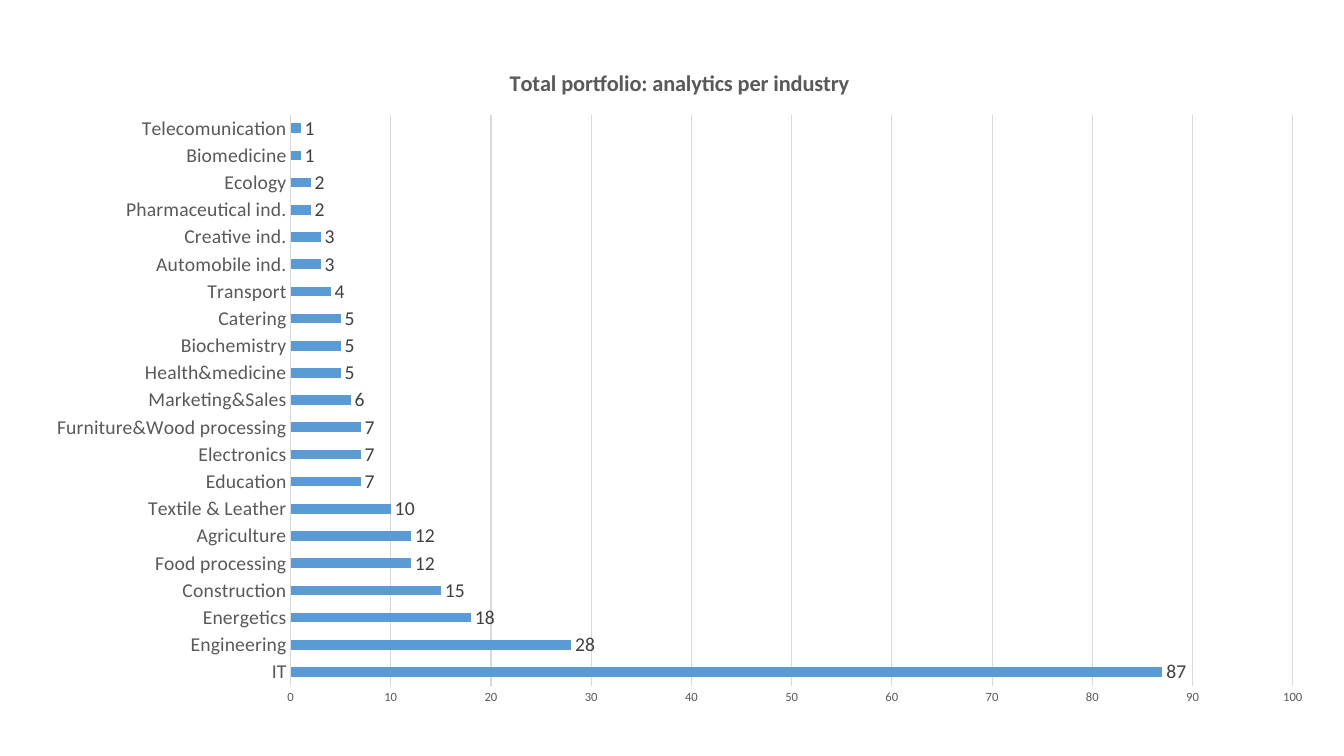
from lxml.etree import SubElement
from pptx import Presentation
from pptx.chart.data import CategoryChartData
from pptx.dml.color import RGBColor
from pptx.enum.chart import XL_CHART_TYPE, XL_LABEL_POSITION, XL_TICK_MARK
from pptx.oxml.ns import qn
from pptx.util import Inches, Pt

BAR_BLUE = RGBColor(0x5B, 0x9B, 0xD5)
AXIS_GRAY = RGBColor(0x59, 0x59, 0x59)
LABEL_GRAY = RGBColor(0x40, 0x40, 0x40)
GRID_GRAY = RGBColor(0xD9, 0xD9, 0xD9)

PROJECTS_BY_INDUSTRY = {
    "IT": 87,
    "Engineering": 28,
    "Energetics": 18,
    "Construction": 15,
    "Food processing": 12,
    "Agriculture": 12,
    "Textile & Leather": 10,
    "Education": 7,
    "Electronics": 7,
    "Furniture&Wood processing": 7,
    "Marketing&Sales": 6,
    "Health&medicine": 5,
    "Biochemistry": 5,
    "Catering": 5,
    "Transport": 4,
    "Automobile ind.": 3,
    "Creative ind.": 3,
    "Pharmaceutical ind.": 2,
    "Ecology": 2,
    "Biomedicine": 1,
    "Telecomunication": 1,
}


def format_font(font, size, color, bold=False):
    font.name = "Calibri"
    font.size = Pt(size)
    font.bold = bold
    font.color.rgb = color


def write_text(text_frame, text, **font_format):
    run = text_frame.paragraphs[0].add_run()
    run.text = text
    format_font(run.font, **font_format)


def format_line(line, color, width=0.75):
    line.color.rgb = color
    line.width = Pt(width)


def set_layout(layout, **settings):
    """Fix a chart part's place, in fractions of the chart size."""
    manual_layout = SubElement(layout, qn("c:manualLayout"))
    for name, value in settings.items():
        SubElement(manual_layout, qn(f"c:{name}")).set("val", str(value))


def add_industry_chart(slide):
    chart_data = CategoryChartData()
    chart_data.categories = PROJECTS_BY_INDUSTRY.keys()
    chart_data.add_series("Series 1", PROJECTS_BY_INDUSTRY.values())
    chart = slide.shapes.add_chart(
        XL_CHART_TYPE.BAR_CLUSTERED,
        Inches(0.31), Inches(0.45), Inches(12.86), Inches(6.68),
        chart_data,
    ).chart
    chart.has_legend = False
    format_font(chart.font, size=10, color=AXIS_GRAY)
    write_text(chart.chart_title.text_frame,
               "Total portfolio: analytics per industry",
               size=16, color=AXIS_GRAY, bold=True)
    format_bars(chart.plots[0])
    format_axes(chart.category_axis, chart.value_axis)

    plot_area = chart.plots[0].series[0]._element.getparent().getparent()
    layout = plot_area.find(qn("c:layout"))
    if layout is None:
        layout = plot_area.makeelement(qn("c:layout"))
        plot_area.insert(0, layout)
    set_layout(layout, layoutTarget="inner", xMode="edge", yMode="edge",
               x=0.2, y=0.103, w=0.773, h=0.848)


def format_bars(plot):
    plot.gap_width = 182
    plot.vary_by_categories = False
    fill = plot.series[0].format.fill
    fill.solid()
    fill.fore_color.rgb = BAR_BLUE
    labels = plot.series[0].data_labels
    labels.show_value = True
    labels.position = XL_LABEL_POSITION.OUTSIDE_END
    format_font(labels.font, size=14, color=LABEL_GRAY)


def format_axes(category_axis, value_axis):
    for axis, size in ((category_axis, 14), (value_axis, 9)):
        axis.major_tick_mark = XL_TICK_MARK.NONE
        axis.minor_tick_mark = XL_TICK_MARK.NONE
        format_font(axis.tick_labels.font, size=size, color=AXIS_GRAY)
    format_line(category_axis.format.line, GRID_GRAY)
    value_axis.minimum_scale = 0
    value_axis.maximum_scale = 100
    value_axis.major_unit = 10
    value_axis.format.line.fill.background()
    value_axis.has_major_gridlines = True
    format_line(value_axis.major_gridlines.format.line, GRID_GRAY)


def main():
    presentation = Presentation()
    presentation.slide_width = Inches(13.33)
    presentation.slide_height = Inches(7.5)
    slide = presentation.slides.add_slide(presentation.slide_layouts[6])
    add_industry_chart(slide)
    presentation.save("out.pptx")


if __name__ == "__main__":
    main()
